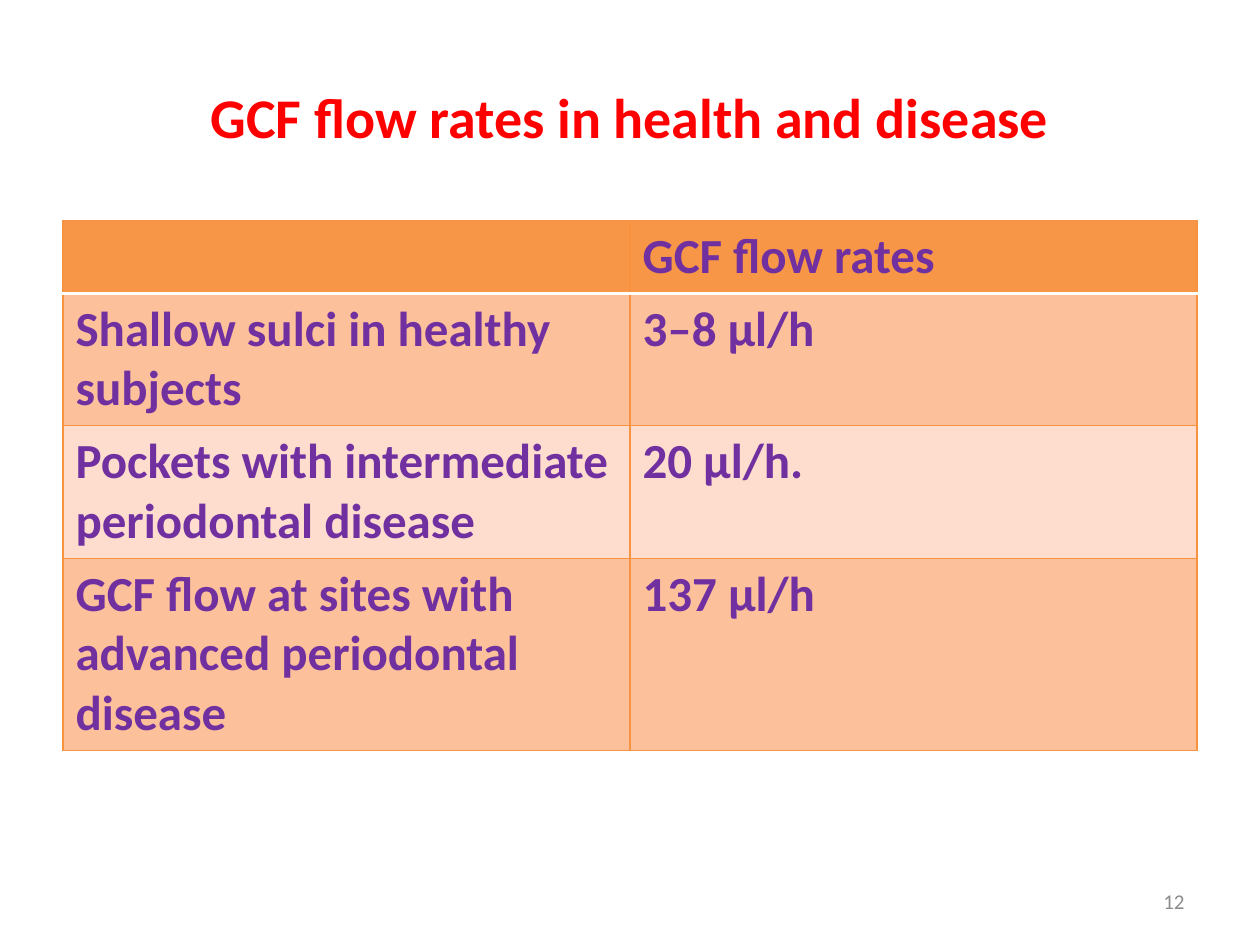
from dataclasses import dataclass

from lxml import etree
from pptx import Presentation
from pptx import util as u
from pptx.dml.color import RGBColor
from pptx.enum import text
from pptx.oxml import ns

COLORS = {
    "title": "FF0000",
    "entry": "7030A0",
    "number": "8C8C8C",
    "header": "F79646",
    "band": "FCC09A",
    "light": "FEDDCF",
    "grid": "F69240",
    "rule": "FFFFFF",
}
MARGIN = u.Cm(1.27)
CONTENT_WIDTH = u.Cm(22.86)
LINE_HEIGHT = 1.21
CELL_PADDING = 0.25
FORMATS = {
    "title": {"name": "Calibri", "size": u.Pt(32), "bold": True},
    "entry": {"name": "Calibri", "size": u.Pt(28), "bold": True},
    "number": {"name": "Calibri", "size": u.Pt(12), "bold": False},
}


@dataclass
class Label:
    wording: str
    role: str
    left: u.Length
    top: u.Length
    width: u.Length
    height: u.Length
    align: text.PP_ALIGN


@dataclass
class RateRow:
    site: str
    rate: str
    fill: str
    lines: int


LABELS = [
    Label("GCF flow rates in health and disease", "title", MARGIN, u.Cm(0.76),
          CONTENT_WIDTH, u.Cm(3.18), text.PP_ALIGN.CENTER),
    Label("12", "number", u.Cm(18.2), u.Cm(17.65),
          u.Cm(5.93), u.Cm(1.02), text.PP_ALIGN.RIGHT),
]
RATES = [
    RateRow("", "GCF flow rates", "header", 1),
    RateRow("Shallow sulci in healthy subjects", "3–8 µl/h", "band", 2),
    RateRow("Pockets with intermediate periodontal disease", "20 µl/h.", "light", 2),
    RateRow("GCF flow at sites with advanced periodontal disease", "137 µl/h", "band", 3),
]


def rgb(role: str) -> RGBColor:
    return RGBColor.from_string(COLORS[role])


def write(paragraph, wording: str, role: str) -> None:
    paragraph.text = wording
    for attribute, value in FORMATS[role].items():
        setattr(paragraph.font, attribute, value)
    paragraph.font.color.rgb = rgb(role)


def add_label(slide, label: Label) -> None:
    frame = slide.shapes.add_textbox(
        label.left, label.top, label.width, label.height).text_frame
    frame.word_wrap = True
    frame.vertical_anchor = text.MSO_ANCHOR.MIDDLE
    frame.paragraphs[0].alignment = label.align
    write(frame.paragraphs[0], label.wording, label.role)


def set_borders(cell, row_index: int) -> None:
    """Draw the grid, with a white rule between the header and the body."""
    ruled_side = {0: "B", 1: "T"}.get(row_index)
    properties = cell._tc.get_or_add_tcPr()
    for position, side in enumerate("LRTB"):
        role, points = ("rule", 2) if side == ruled_side else ("grid", 0.75)
        line = etree.Element(ns.qn(f"a:ln{side}"), w=str(u.Pt(points)))
        fill = etree.SubElement(line, ns.qn("a:solidFill"))
        etree.SubElement(fill, ns.qn("a:srgbClr"), val=COLORS[role])
        properties.insert(position, line)


def add_rate_table(slide, rates: list[RateRow]) -> None:
    heights = [u.Cm(rate.lines * LINE_HEIGHT + CELL_PADDING) for rate in rates]
    table = slide.shapes.add_table(
        len(rates), 2, MARGIN, u.Cm(4.45), CONTENT_WIDTH, sum(heights)).table
    for row_index, rate in enumerate(rates):
        table.rows[row_index].height = heights[row_index]
        for column, wording in enumerate((rate.site, rate.rate)):
            cell = table.cell(row_index, column)
            cell.fill.solid()
            cell.fill.fore_color.rgb = rgb(rate.fill)
            write(cell.text_frame.paragraphs[0], wording, "entry")
            set_borders(cell, row_index)


def main() -> None:
    deck = Presentation()
    deck.slide_width, deck.slide_height = u.Cm(25.4), u.Cm(19.05)
    slide = deck.slides.add_slide(deck.slide_layouts[6])
    for label in LABELS:
        add_label(slide, label)
    add_rate_table(slide, RATES)
    deck.save("out.pptx")


if __name__ == "__main__":
    main()
